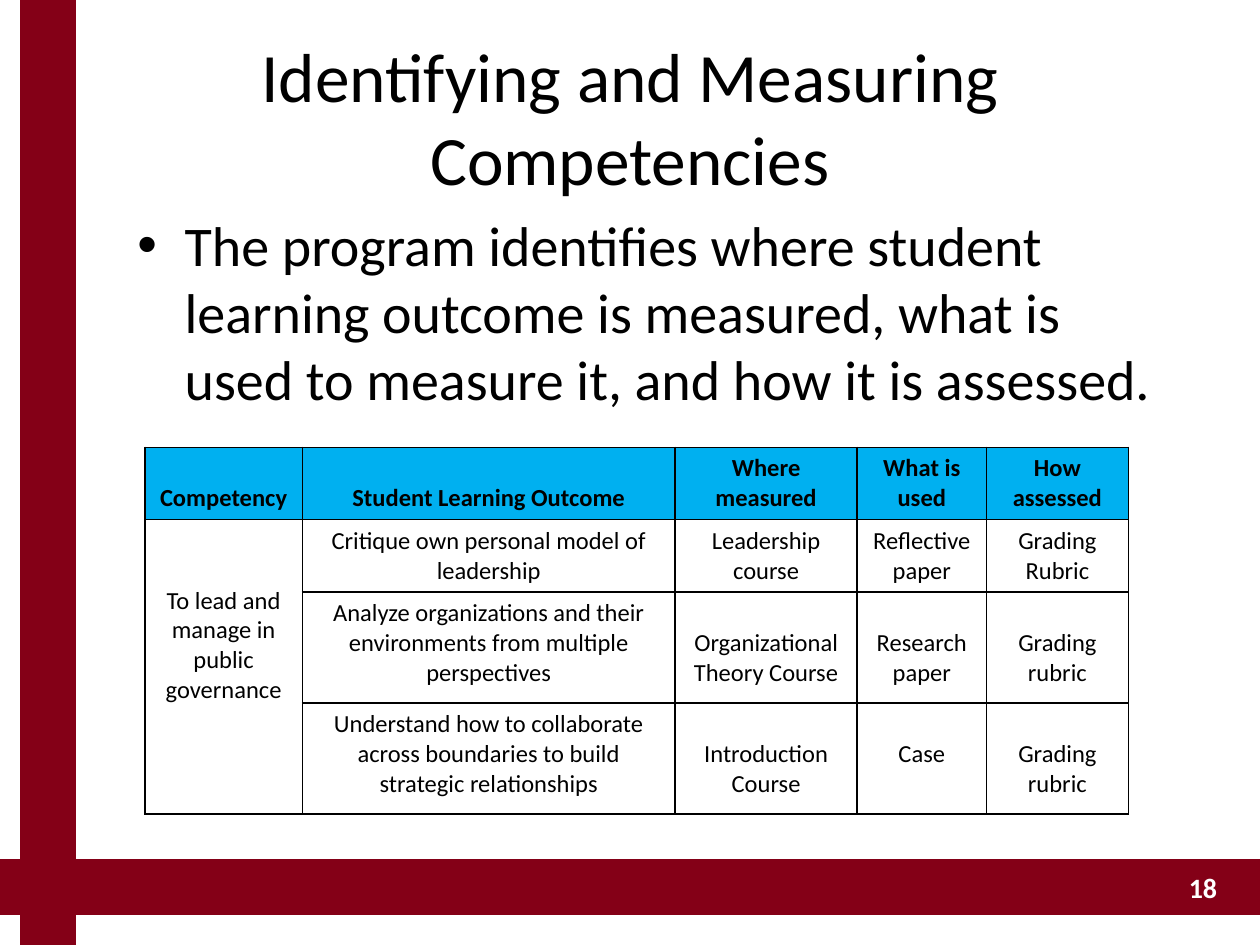
import pptx
import pptx.util
import pptx.dml.color
import pptx.enum.shapes
import pptx.enum.text
import pptx.oxml
import pptx.oxml.ns

Pt = pptx.util.Pt
ALIGN = pptx.enum.text.PP_ALIGN
ANCHOR = pptx.enum.text.MSO_ANCHOR

THEME = {
    "font": "Calibri",
    "text": "000000", "light": "FFFFFF", "band": "840017", "header": "00B0F0",
    "title": 39.6, "body": 32, "number": 16, "table": 14,
}

TITLE = "Identifying and Measuring Competencies"
BULLET = ("The program identifies where student learning outcome is measured, "
          "what is used to measure it, and how it is assessed.")
NUMBER = "18"

# Each cell: text, number of lines it is lowered from the top of the cell
CELLS = [
    [("Competency", 1), ("Student Learning Outcome", 1), ("Where measured", 0),
     ("What is used", 0), ("How assessed", 0)],
    [("To lead and manage in public governance", 2),
     ("Critique own personal model of leadership", 0), ("Leadership course", 0),
     ("Reflective paper", 0), ("Grading Rubric", 0)],
    [None, ("Analyze organizations and their environments from multiple perspectives", 0),
     ("Organizational Theory Course", 1), ("Research paper", 1), ("Grading rubric", 1)],
    [None, ("Understand how to collaborate across boundaries to build strategic relationships", 0),
     ("Introduction Course", 1), ("Case", 1), ("Grading rubric", 1)],
]
COLUMNS = [90, 213, 104, 74, 81]
ROWS = [41.4, 41.4, 63.4, 63.4]
TABLE_AT = (82.8, 255.6)
CELL_INSET = 3.6
LINE_HEIGHT = 17.1

BANDS = [(0, 491.8, 720, 30.2), (12.2, 0, 30.2, 540)]


def rgb(name):
    return pptx.dml.color.RGBColor.from_string(THEME[name])


def write(tf, text, size, color="text", bold=False, align=ALIGN.CENTER):
    p = tf.paragraphs[0]
    p.alignment = align
    p.space_before = Pt(0)
    r = p.add_run()
    r.text = text
    r.font.name = THEME["font"]
    r.font.size = Pt(THEME[size])
    r.font.bold = bold
    r.font.color.rgb = rgb(color)
    return p


def place(sp, left, top, width, height):
    sp.left, sp.top, sp.width, sp.height = Pt(left), Pt(top), Pt(width), Pt(height)


def frame(sp, anchor, wrap=True):
    tf = sp.text_frame
    tf.auto_size = pptx.enum.text.MSO_AUTO_SIZE.NONE
    tf.word_wrap = wrap
    tf.vertical_anchor = anchor
    tf.margin_left = tf.margin_right = tf.margin_top = tf.margin_bottom = Pt(3.6)
    return tf


def add_bullet(p, indent):
    pPr = p._p.get_or_add_pPr()
    pPr.set("marL", str(Pt(indent)))
    pPr.set("indent", str(-Pt(indent)))
    ns = pptx.oxml.ns.nsdecls("a")
    pPr.append(pptx.oxml.parse_xml(f'<a:buFont {ns} typeface="Arial"/>'))
    pPr.append(pptx.oxml.parse_xml(f'<a:buChar {ns} char="•"/>'))


def add_borders(cell):
    tcPr = cell._tc.get_or_add_tcPr()
    ns = pptx.oxml.ns.nsdecls("a")
    for side in ("lnL", "lnR", "lnT", "lnB"):
        tcPr.append(pptx.oxml.parse_xml(
            f'<a:{side} {ns} w="{Pt(1)}"><a:solidFill>'
            f'<a:srgbClr val="{THEME["text"]}"/></a:solidFill></a:{side}>'))


def add_bands(s):
    for box in BANDS:
        sp = s.shapes.add_shape(pptx.enum.shapes.MSO_SHAPE.RECTANGLE, *map(Pt, box))
        sp.shadow.inherit = False
        sp.fill.solid()
        sp.fill.fore_color.rgb = rgb("band")
        sp.line.color.rgb = rgb("band")
        sp.line.width = Pt(2)


def add_outcomes(s):
    table = s.shapes.add_table(len(ROWS), len(COLUMNS), *map(Pt, TABLE_AT),
                               Pt(sum(COLUMNS)), Pt(sum(ROWS))).table
    table.first_row = table.horz_banding = False
    for column, width in zip(table.columns, COLUMNS):
        column.width = Pt(width)
    for row, height in zip(table.rows, ROWS):
        row.height = Pt(height)
    table.cell(1, 0).merge(table.cell(3, 0))
    for i, row in enumerate(CELLS):
        for j, content in enumerate(row):
            cell = table.cell(i, j)
            add_borders(cell)
            if i == 0:
                cell.fill.solid()
                cell.fill.fore_color.rgb = rgb("header")
            else:
                cell.fill.background()
            if content:
                text, lowered = content
                cell.margin_top = Pt(CELL_INSET + lowered * LINE_HEIGHT)
                write(cell.text_frame, text, "table", bold=i == 0)


def main():
    prs = pptx.Presentation()
    prs.slide_width, prs.slide_height = Pt(720), Pt(540)
    s = prs.slides.add_slide(prs.slide_layouts[1])

    title, body = s.placeholders
    place(title, 36, 21.6, 648, 90)
    write(frame(title, ANCHOR.MIDDLE), TITLE, "title")
    place(body, 74.9, 116.6, 594.7, 365.8)
    p = write(frame(body, ANCHOR.TOP), BULLET, "body", align=ALIGN.LEFT)
    add_bullet(p, 27)

    add_bands(s)
    add_outcomes(s)

    number = s.shapes.add_textbox(Pt(673.2), Pt(493.9), Pt(25.9), Pt(26.6))
    write(frame(number, ANCHOR.MIDDLE, wrap=False), NUMBER, "number",
          color="light", bold=True, align=ALIGN.RIGHT)

    prs.save("out.pptx")


if __name__ == "__main__":
    main()
